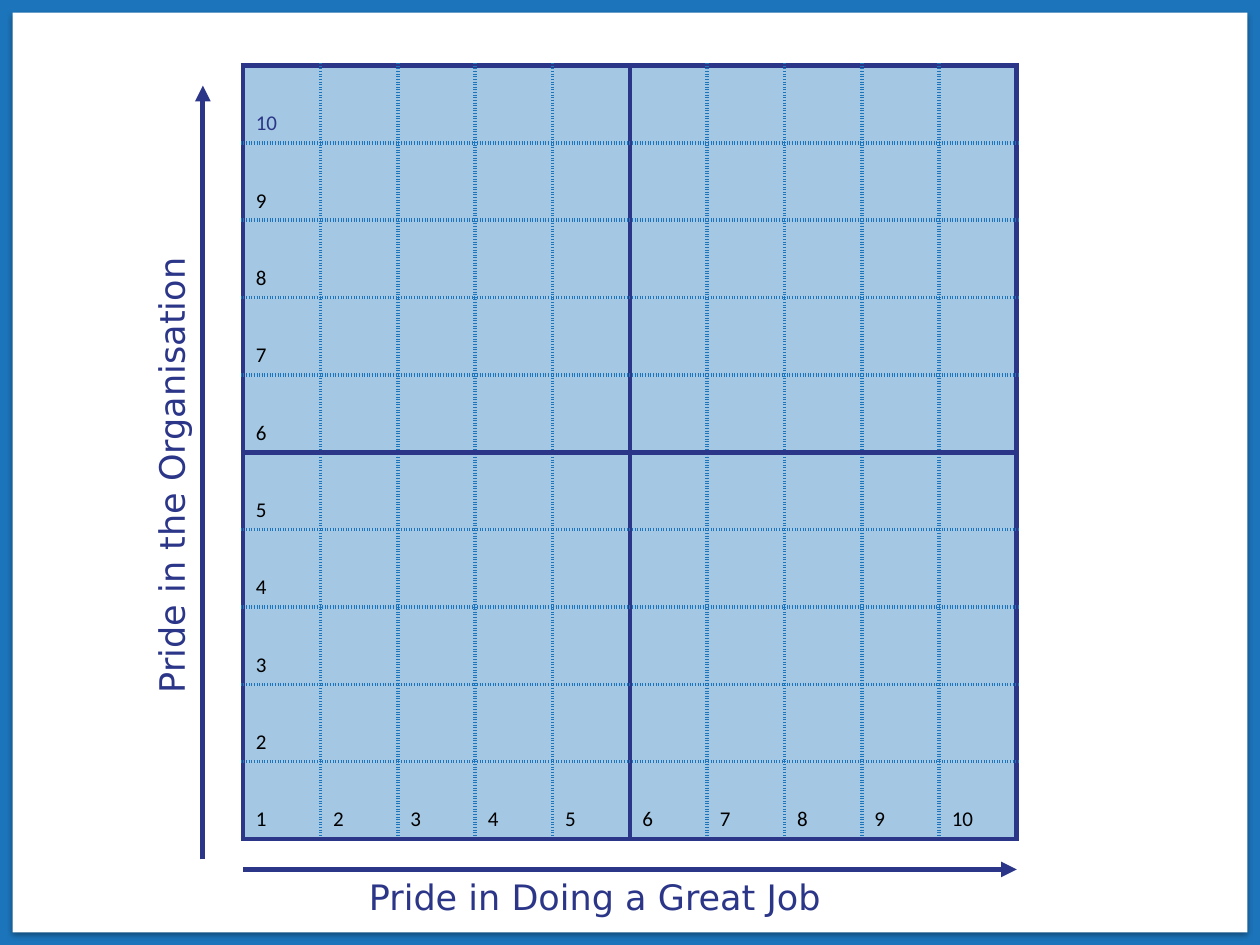
from dataclasses import dataclass

from lxml import etree
from pptx import Presentation
from pptx.dml.color import RGBColor
from pptx.enum.dml import MSO_LINE_DASH_STYLE
from pptx.enum.shapes import MSO_CONNECTOR, MSO_SHAPE
from pptx.enum.text import MSO_ANCHOR, MSO_AUTO_SIZE
from pptx.oxml import parse_xml
from pptx.oxml.ns import nsdecls, qn
from pptx.util import Inches, Pt

RECTANGLE = MSO_SHAPE.RECTANGLE
STRAIGHT = MSO_CONNECTOR.STRAIGHT
BOTTOM = MSO_ANCHOR.BOTTOM
FIT_SHAPE = MSO_AUTO_SIZE.SHAPE_TO_FIT_TEXT
DOTTED = MSO_LINE_DASH_STYLE.ROUND_DOT

BLUE = RGBColor(0x1C, 0x75, 0xBB)
INDIGO = RGBColor(0x2C, 0x36, 0x88)
WHITE = RGBColor(0xFF, 0xFF, 0xFF)
BLACK = RGBColor(0x00, 0x00, 0x00)

SCORES = 10
HEAVY_EDGES = (0, SCORES // 2, SCORES)
GRID_LEFT, GRID_TOP, GRID_SIZE = 1.93, 0.52, 6.14
NUMBER_FORMAT = {"name": "Calibri", "size": Pt(12)}
LABEL_FORMAT = {"name": "DejaVu Sans", "size": Pt(20)}
PLAIN_TABLE = {"first_row": False, "horz_banding": False}


@dataclass(frozen=True)
class Axis:
    label: str
    start: tuple[float, float]
    end: tuple[float, float]
    label_box: tuple[float, float, float, float]
    rotation: int


AXES = (
    Axis("Pride in the Organisation", (1.61, 6.82), (1.61, 0.68), (-0.49, 3.53, 3.7, 0.44), 270),
    Axis("Pride in Doing a Great Job", (1.93, 6.9), (8.07, 6.9), (2.83, 6.9, 4.33, 0.44), 0),
)


def apply_format(target, values: dict) -> None:
    for name, value in values.items():
        setattr(target, name, value)


def write_text(text_frame, text: str, font_format: dict, color: RGBColor) -> None:
    run = text_frame.paragraphs[0].add_run()
    run.text = text
    apply_format(run.font, font_format)
    run.font.color.rgb = color


def draw_panel(slide) -> None:
    panel = slide.shapes.add_shape(
        RECTANGLE, Inches(0.1), Inches(0.1), Inches(9.8), Inches(7.3)
    )
    panel.fill.solid()
    panel.fill.fore_color.rgb = WHITE
    panel.line.fill.background()
    shadow = parse_xml(
        f'<a:effectLst {nsdecls("a")}>'
        f'<a:outerShdw blurRad="{Pt(3.1)}" dist="{Pt(1.8)}" dir="5400000" rotWithShape="0">'
        f'<a:srgbClr val="{BLACK}"><a:alpha val="35000"/></a:srgbClr>'
        "</a:outerShdw></a:effectLst>"
    )
    panel._element.spPr.append(shadow)


def set_border(cell, side: str, edge: int) -> None:
    heavy = edge in HEAVY_EDGES
    color, width, dash = (INDIGO, 3, "solid") if heavy else (BLUE, 2.25, "sysDot")
    border = parse_xml(
        f'<a:ln{side} {nsdecls("a")} w="{Pt(width)}" cap="flat" cmpd="sng">'
        f'<a:solidFill><a:srgbClr val="{color}"/></a:solidFill>'
        f'<a:prstDash val="{dash}"/></a:ln{side}>'
    )
    cell._tc.get_or_add_tcPr().append(border)


def format_cell(cell, row: int, column: int) -> None:
    edges = {"L": column, "R": column + 1, "T": row, "B": row + 1}
    for side, edge in edges.items():
        set_border(cell, side, edge)
    cell.fill.solid()
    cell.fill.fore_color.rgb = BLUE
    color = cell._tc.tcPr.find(f"{qn('a:solidFill')}/{qn('a:srgbClr')}")
    etree.SubElement(color, qn("a:alpha"), val="40000")
    cell.vertical_anchor = BOTTOM


def draw_grid(slide) -> None:
    table = slide.shapes.add_table(
        SCORES, SCORES, Inches(GRID_LEFT), Inches(GRID_TOP), Inches(GRID_SIZE), Inches(GRID_SIZE)
    ).table
    apply_format(table, PLAIN_TABLE)
    for row in range(SCORES):
        for column in range(SCORES):
            cell = table.cell(row, column)
            format_cell(cell, row, column)
            if column == 0 or row == SCORES - 1:
                score = SCORES - row if column == 0 else column + 1
                color = INDIGO if row == 0 else BLACK
                write_text(cell.text_frame, str(score), NUMBER_FORMAT, color)


def draw_axis(slide, axis: Axis) -> None:
    ends = [Inches(value) for value in axis.start + axis.end]
    arrow = slide.shapes.add_connector(STRAIGHT, *ends)
    arrow.line.color.rgb = INDIGO
    arrow.line.width = Pt(3)
    etree.SubElement(arrow.line._get_or_add_ln(), qn("a:tailEnd"), type="triangle")
    etree.SubElement(arrow._element.spPr, qn("a:effectLst"))

    label = slide.shapes.add_textbox(*(Inches(value) for value in axis.label_box))
    label.rotation = axis.rotation
    apply_format(label.text_frame, {"word_wrap": True, "auto_size": FIT_SHAPE})
    write_text(label.text_frame, axis.label, LABEL_FORMAT, INDIGO)


def main() -> None:
    presentation = Presentation()
    presentation.slide_width = Inches(10)
    presentation.slide_height = Inches(7.5)
    slide = presentation.slides.add_slide(presentation.slide_layouts[6])
    slide.background.fill.solid()
    slide.background.fill.fore_color.rgb = BLUE
    draw_panel(slide)
    draw_grid(slide)
    for axis in AXES:
        draw_axis(slide, axis)
    presentation.save("out.pptx")


if __name__ == "__main__":
    main()
